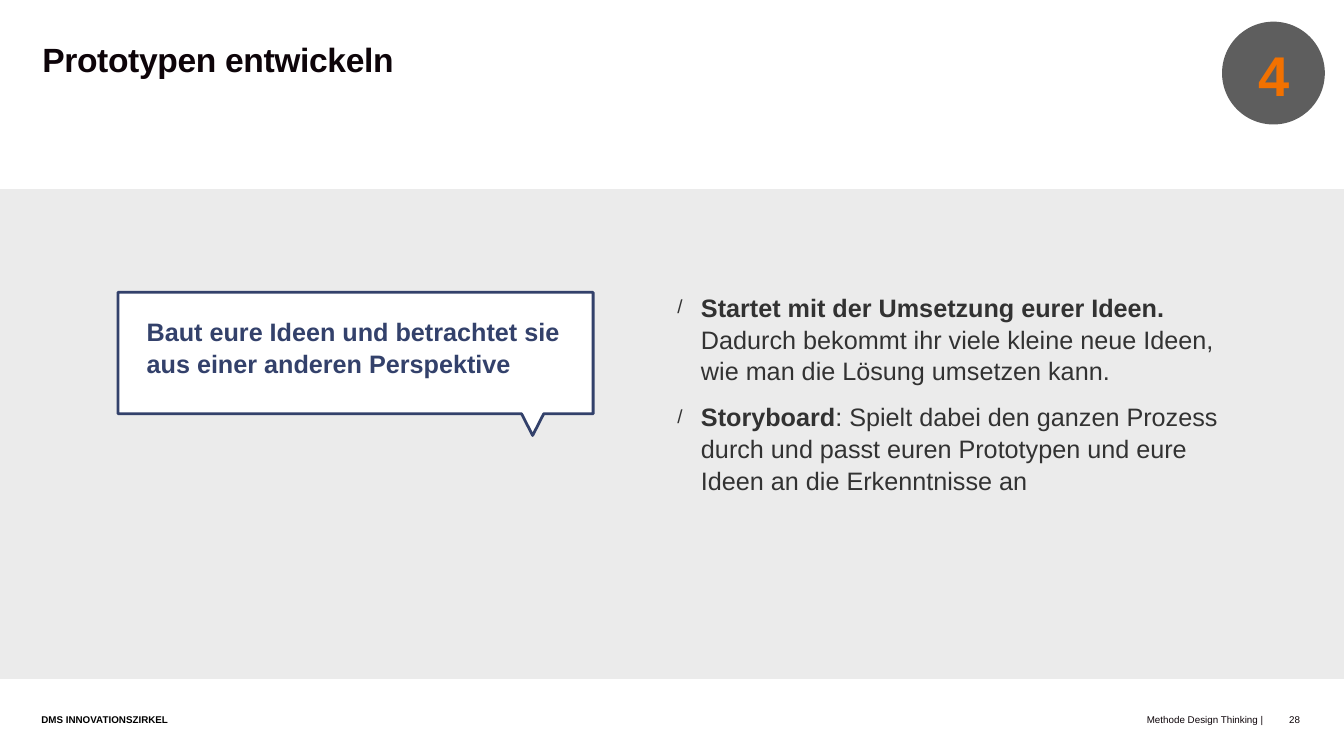
from lxml.etree import SubElement
from pptx import Presentation
from pptx.dml.color import RGBColor
from pptx.enum.shapes import MSO_SHAPE
from pptx.enum.text import MSO_ANCHOR, PP_ALIGN
from pptx.oxml.ns import qn
from pptx.util import Inches, Pt

INK = "0D0409"
NAVY = "33416B"


def rgb(value):
    return RGBColor.from_string(value)


def add_text(box, paragraphs, size, color, align=PP_ALIGN.LEFT, spacing=1.05,
             tracking=0, bullet=None, wrap=True, anchor=MSO_ANCHOR.TOP):
    """Add a text box; each paragraph is a list of (text, bold) runs."""
    tf = s.shapes.add_textbox(*map(Inches, box)).text_frame
    tf.margin_left = tf.margin_right = tf.margin_top = tf.margin_bottom = 0
    tf.word_wrap = wrap
    tf.vertical_anchor = anchor
    for i, runs in enumerate(paragraphs):
        p = tf.add_paragraph() if i else tf.paragraphs[0]
        p.alignment = align
        p.line_spacing = spacing
        if i:
            p.space_before = Pt(20)
        if bullet:
            pPr = p._p.get_or_add_pPr()
            pPr.set("marL", str(Inches(0.47)))
            pPr.set("indent", str(-Inches(0.47)))
            SubElement(pPr, qn("a:buSzPct")).set("val", "75000")
            SubElement(pPr, qn("a:buFont")).set("typeface", "Arial")
            SubElement(pPr, qn("a:buChar")).set("char", bullet)
        for text, bold in runs:
            r = p.add_run()
            r.text = text
            r.font.name = "Arial"
            r.font.size = Pt(size)
            r.font.bold = bold
            r.font.color.rgb = rgb(color)
            if tracking:
                r._r.get_or_add_rPr().set("spc", str(round(tracking * 100)))


prs = Presentation()
prs.slide_width = Inches(26.67)
prs.slide_height = Inches(15)
s = prs.slides.add_slide(prs.slide_layouts[6])

# Content band and number badge
for kind, box, color in (
    (MSO_SHAPE.RECTANGLE, (-0.34, 3.75, 27.36, 9.72), "EBEBEB"),
    (MSO_SHAPE.OVAL, (24.25, 0.43, 2.04, 2.04), "5E5E5E"),
):
    sp = s.shapes.add_shape(kind, *map(Inches, box))
    sp.shadow.inherit = False
    sp.fill.solid()
    sp.fill.fore_color.rgb = rgb(color)
    sp.line.fill.background()

add_text((24.97, 0.78, 0.6, 1.33), [[("4", True)]], 80, "F27100",
         align=PP_ALIGN.CENTER, tracking=-2.4, wrap=False,
         anchor=MSO_ANCHOR.MIDDLE)

# Title
add_text((0.84, 0.83, 23, 1.5), [[("Prototypen entwickeln", True)]], 48, INK,
         spacing=Pt(54), tracking=-0.5)

# Speech bubble
outline = [(2.34, 5.8), (2.34, 8.21), (10.35, 8.21), (10.57, 8.64),
           (10.79, 8.21), (11.77, 8.21), (11.77, 5.8)]
points = [(Inches(x), Inches(y)) for x, y in outline]
builder = s.shapes.build_freeform(*points[0])
builder.add_line_segments(points[1:], close=True)
bubble = builder.convert_to_shape()
bubble.shadow.inherit = False
bubble.fill.solid()
bubble.fill.fore_color.rgb = rgb("FFFFFF")
bubble.line.color.rgb = rgb(NAVY)
bubble.line.width = Pt(4)

add_text((2.91, 6.25, 8.29, 1.5),
         [[("Baut eure Ideen und betrachtet sie aus einer anderen Perspektive", True)]],
         36, NAVY)

# Instructions
add_text((13.44, 5.77, 10.91, 6.64), [
    [("Startet mit der Umsetzung eurer Ideen.", True),
     (" Dadurch bekommt ihr viele kleine neue Ideen, "
      "wie man die Lösung umsetzen kann.", False)],
    [("Storyboard", True),
     (": Spielt dabei den ganzen Prozess durch und passt euren Prototypen "
      "und eure Ideen an die Erkenntnisse an", False)],
], 36, "323232", bullet="/")

# Footer
for left, width, text, bold, color, align in (
    (0.82, 12, "DMS INNOVATIONSZIRKEL", True, "000000", PP_ALIGN.LEFT),
    (12.91, 12.16, "Methode Design Thinking |", False, INK, PP_ALIGN.RIGHT),
    (25.4, 0.4, "28", False, INK, PP_ALIGN.RIGHT),
):
    add_text((left, 14.17, width, 0.23), [[(text, bold)]], 14, color,
             align=align, spacing=Pt(16))

prs.save("out.pptx")
